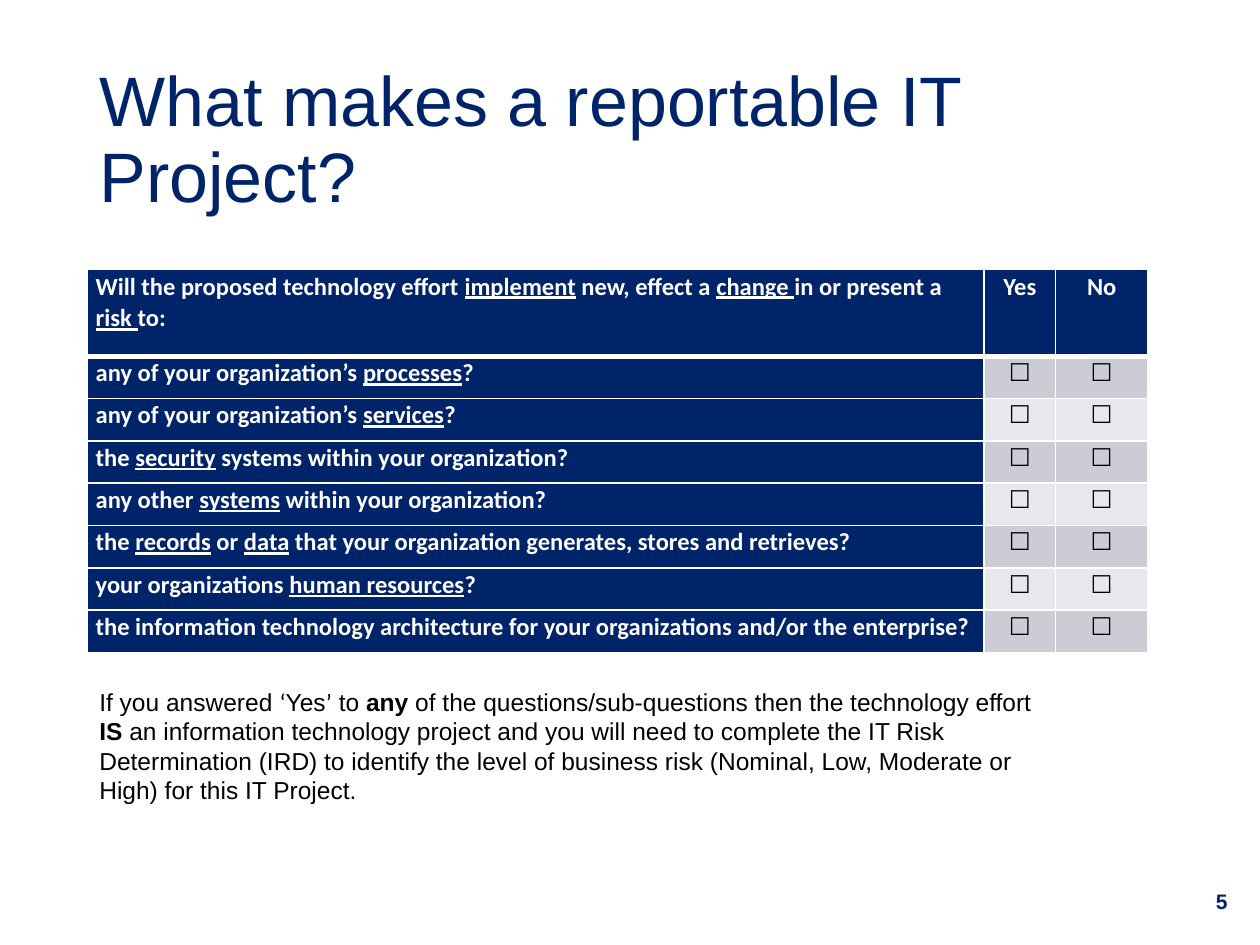
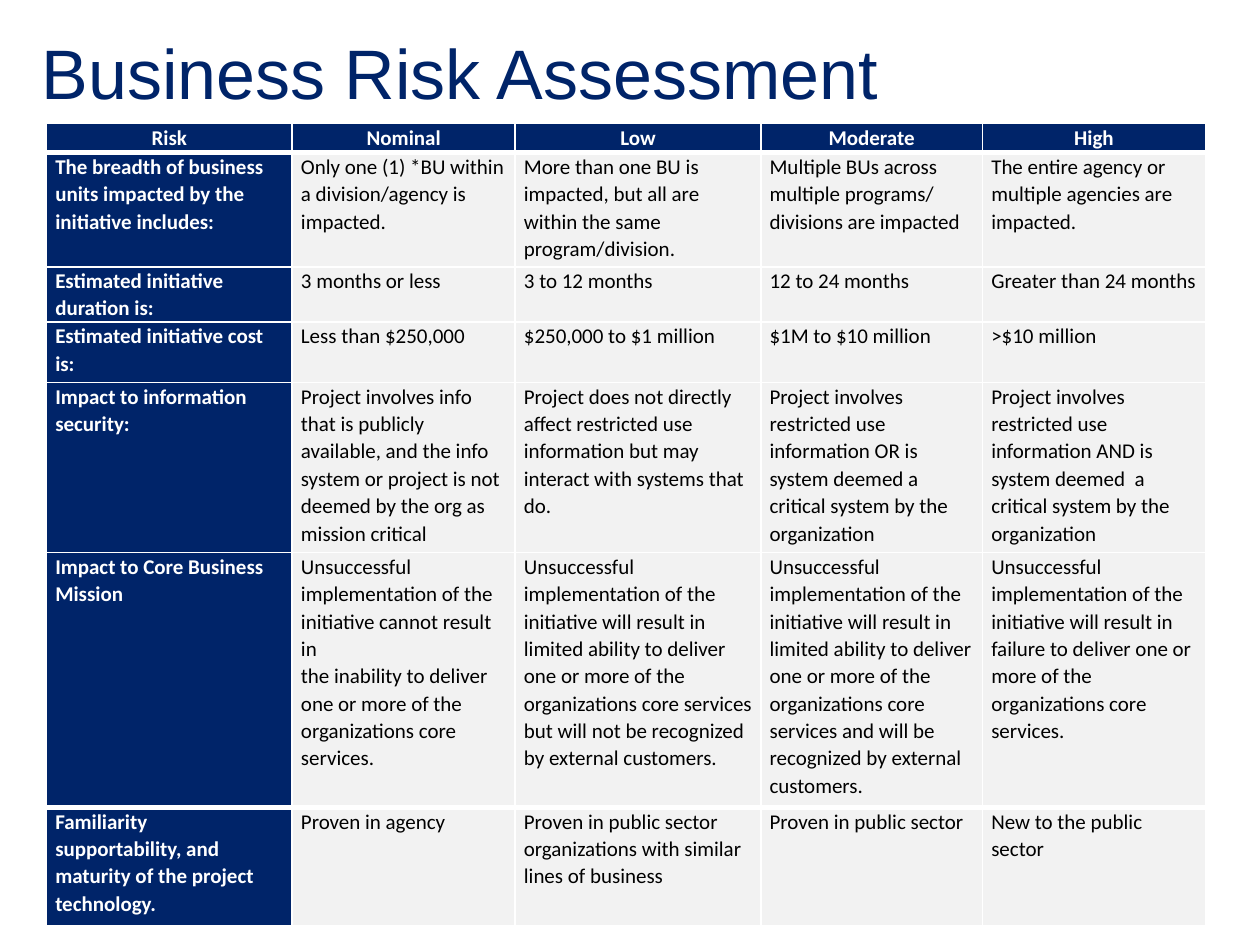
import pptx
import pptx.dml.color
import pptx.enum.text
import pptx.oxml
import pptx.util

Pt = pptx.util.Pt
ALIGN = pptx.enum.text.PP_ALIGN
ANCHOR = pptx.enum.text.MSO_ANCHOR

COLORS = {
    "navy": "002469",
    "white": "FFFFFF",
    "black": "000000",
    "band_dark": "CCCDD4",
    "band_light": "E7E8EB",
    "pale": "F2F2F2",
}
TEXT_FONT = "Arial"
TABLE_FONT = "Calibri"
A_NS = "http://schemas.openxmlformats.org/drawingml/2006/main"
THIN, THICK = 1, 3
BOX = "☐"

# Underscores enclose the underlined words.
QUESTIONS = [
    "any of your organization’s _processes_?",
    "any of your organization’s _services_?",
    "the _security_ systems within your organization?",
    "any other _systems_ within your organization?",
    "the _records_ or _data_ that your organization generates, stores and retrieves?",
    "your organizations _human resources_?",
    "the information technology architecture for your organizations and/or the enterprise?",
]
CHECKLIST = [
    ["Will the proposed technology effort _implement_ new, effect a _change _in or "
     "present a _risk _to:", "Yes", "No"],
] + [[question, BOX, BOX] for question in QUESTIONS]

NOTE = [
    ("If you answered ", TEXT_FONT, False),
    ("‘", TABLE_FONT, False),
    ("Yes", TEXT_FONT, False),
    ("’", TABLE_FONT, False),
    (" to ", TEXT_FONT, False),
    ("any", TEXT_FONT, True),
    (" of the questions/sub-questions then the technology effort ", TEXT_FONT, False),
    ("IS", TEXT_FONT, True),
    (" an information technology project and you will need to complete the IT Risk "
     "Determination (IRD) to identify the level of business risk (Nominal, Low, "
     "Moderate or High) for this IT Project.", TEXT_FONT, False),
]

RISKS = [
    ["Risk", "Nominal", "Low", "Moderate", "High"],
    ["The breadth of business units impacted by the initiative includes:",
     "Only one (1) *BU within a division/agency is impacted.",
     "More than one BU is impacted, but all are within the same program/division.",
     "Multiple BUs across multiple programs/ divisions are impacted",
     "The entire agency or multiple agencies are impacted."],
    ["Estimated initiative duration is:", "3 months or less", "3 to 12 months",
     "12 to 24 months", "Greater than 24 months"],
    ["Estimated initiative cost is:", "Less than $250,000", "$250,000 to $1 million",
     "$1M to $10 million", ">$10 million"],
    ["Impact to information security:",
     "Project involves info that is publicly available, and the info system or project "
     "is not deemed by the org as mission critical",
     "Project does not directly affect restricted use information but may interact with "
     "systems that do.",
     "Project involves restricted use information OR is system deemed a critical system "
     "by the organization",
     "Project involves restricted use information AND is system deemed  a critical system "
     "by the organization"],
    ["Impact to Core Business Mission",
     "Unsuccessful implementation of the initiative cannot result in\n"
     "the inability to deliver one or more of the organizations core services.",
     "Unsuccessful implementation of the initiative will result in limited ability to "
     "deliver one or more of the organizations core services but will not be recognized "
     "by external customers.",
     "Unsuccessful implementation of the initiative will result in limited ability to "
     "deliver one or more of the organizations core services and will be recognized by "
     "external customers.",
     "Unsuccessful implementation of the initiative will result in failure to deliver one "
     "or more of the organizations core services."],
    ["Familiarity   supportability, and maturity of the project technology.",
     "Proven in agency",
     "Proven in public sector organizations with similar lines of business",
     "Proven in public sector",
     "New to the public sector"],
]


def rgb(name):
    return pptx.dml.color.RGBColor.from_string(COLORS[name])


def add_run(p, text, size, color, font=TEXT_FONT, bold=False, underline=False):
    r = p.add_run()
    r.text = text
    r.font.name = font
    r.font.size = Pt(size)
    r.font.bold = bold
    r.font.underline = underline
    r.font.color.rgb = rgb(color)


def add_titled_slide(prs, title, left, top, width, height):
    s = prs.slides.add_slide(prs.slide_layouts[5])
    sp = s.shapes.title
    sp.left, sp.top, sp.width, sp.height = Pt(left), Pt(top), Pt(width), Pt(height)
    tf = sp.text_frame
    tf.auto_size = pptx.enum.text.MSO_AUTO_SIZE.NONE
    tf.vertical_anchor = ANCHOR.MIDDLE
    p = tf.paragraphs[0]
    p.alignment = ALIGN.LEFT
    p.line_spacing = 0.9
    add_run(p, title, 40, "navy")
    return s


def add_text_box(s, left, top, width, height):
    """Return the text frame of a new wrapping text box."""
    tf = s.shapes.add_textbox(Pt(left), Pt(top), Pt(width), Pt(height)).text_frame
    tf.word_wrap = True
    return tf


def add_page_number(s, number):
    tf = add_text_box(s, 546.5, 500.4, 162, 28.8)
    tf.vertical_anchor = ANCHOR.MIDDLE
    p = tf.paragraphs[0]
    p.alignment = ALIGN.RIGHT
    add_run(p, str(number), 12, "navy", bold=True)


def add_note(s, runs):
    tf = add_text_box(s, 49.7, 386.6, 551.5, 97.2)
    tf.margin_top = Pt(6)
    p = tf.paragraphs[0]
    for text, font, bold in runs:
        add_run(p, text, 14, "black", font, bold)


def set_borders(cell, top, bottom):
    tcPr = cell._tc.get_or_add_tcPr()
    for side, width in (("L", THIN), ("R", THIN), ("T", top), ("B", bottom)):
        tcPr.append(pptx.oxml.parse_xml(
            f'<a:ln{side} xmlns:a="{A_NS}" w="{Pt(width)}"><a:solidFill>'
            f'<a:srgbClr val="{COLORS["white"]}"/></a:solidFill></a:ln{side}>'))


def fill_cell(cell, text, size, is_head, fill, alignment):
    cell.fill.solid()
    cell.fill.fore_color.rgb = rgb("navy" if is_head else fill)
    cell.margin_left = cell.margin_right = Pt(5)
    cell.margin_top = cell.margin_bottom = 0
    tf = cell.text_frame
    for i, line in enumerate(text.split("\n")):
        p = tf.add_paragraph() if i else tf.paragraphs[0]
        p.alignment = alignment
        p.line_spacing = 1.07
        for j, part in enumerate(line.split("_")):
            add_run(p, part, size, "white" if is_head else "black", TABLE_FONT,
                    bold=is_head, underline=j % 2 == 1)


def add_grid(s, rows, left, top, widths, heights, size, fills, is_centred, thick_below):
    """Add a table with navy first row and column; fills alternate over the body rows."""
    table = s.shapes.add_table(len(rows), len(widths), Pt(left), Pt(top),
                               Pt(sum(widths)), Pt(sum(heights))).table
    table.horz_banding = False
    for column, width in zip(table.columns, widths):
        column.width = Pt(width)
    for i, (row, height) in enumerate(zip(rows, heights)):
        table.rows[i].height = Pt(height)
        for j, text in enumerate(row):
            cell = table.cell(i, j)
            set_borders(cell, THICK if i - 1 in thick_below else THIN,
                        THICK if i in thick_below else THIN)
            fill_cell(cell, text, size, i == 0 or j == 0, fills[(i - 1) % len(fills)],
                      ALIGN.CENTER if is_centred(i, j) else ALIGN.LEFT)


def main():
    prs = pptx.Presentation()
    prs.slide_width, prs.slide_height = Pt(720), Pt(540)

    s = add_titled_slide(prs, "What makes a reportable IT Project?", 49.7, 28.8, 620.6, 104.4)
    add_grid(s, CHECKLIST, 49.7, 154.1, [512.6, 41, 52.6],
             [49.5] + [24.2] * len(QUESTIONS), 14, ["band_dark", "band_light"],
             is_centred=lambda i, j: j > 0, thick_below={0})
    add_note(s, NOTE)
    add_page_number(s, 5)

    s = add_titled_slide(prs, "Business Risk Assessment", 16.6, 17.3, 620.6, 53.3)
    add_grid(s, RISKS, 26.6, 70.6, [140.4, 127.4, 140.4, 126.7, 127.4],
             [16.6, 65.3, 31.5, 34.6, 97.2, 145.6, 67.7], 12, ["pale"],
             is_centred=lambda i, j: i == 0, thick_below={0, 5})

    prs.save("out.pptx")


if __name__ == "__main__":
    main()
